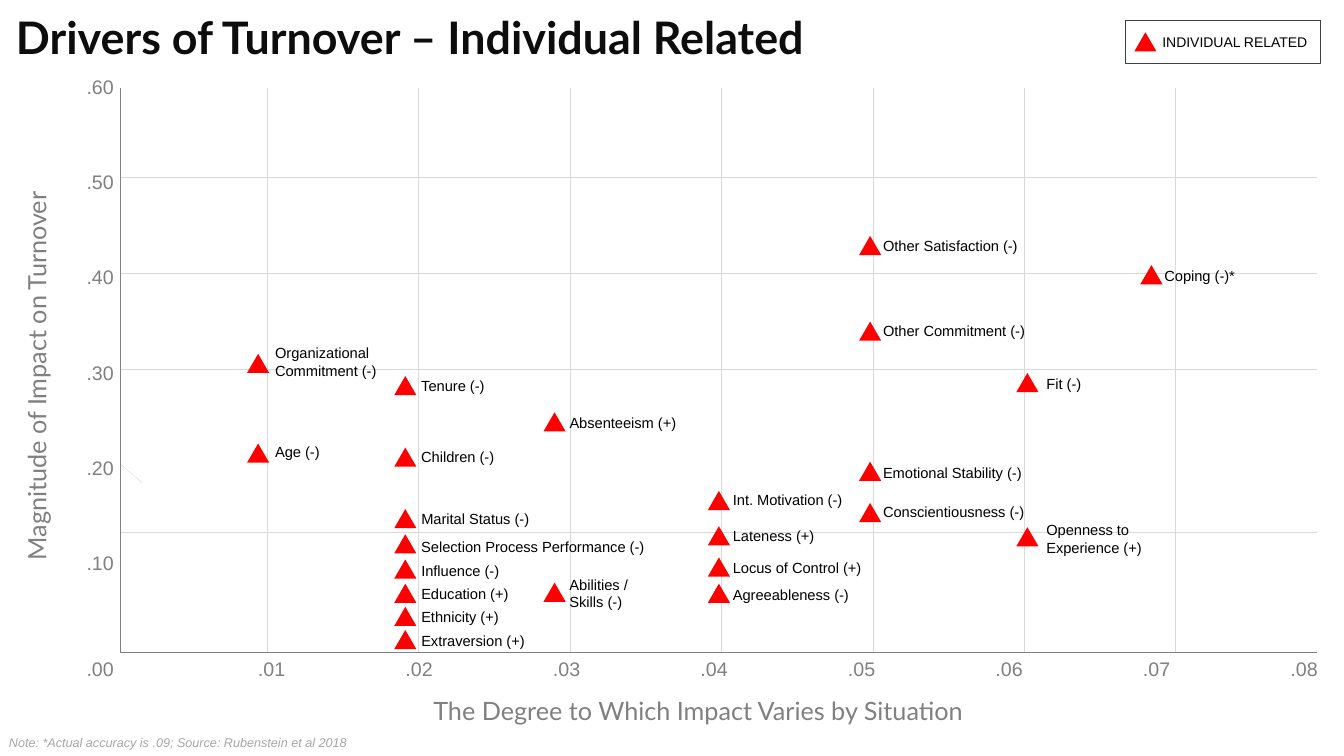
import pptx
import pptx.util
import pptx.dml.color
import pptx.enum.shapes
import pptx.enum.text
import pptx.oxml.ns
import lxml.etree

Inches = pptx.util.Inches
Shape = pptx.enum.shapes.MSO_SHAPE
Anchor = pptx.enum.text.MSO_ANCHOR
Align = pptx.enum.text.PP_ALIGN

GRAY = "808080"
PALE = "D9D9D9"
RED = "FF0000"
BLACK = "000000"
WHITE = "FFFFFF"

# marker x, label x, [label, marker y, label y, width, height]
GROUPS = [
    (1.26, 1.44, [
        ("Organizational Commitment (-)", 2.64, 2.49, 1.31, 0.45),
        ("Age (-)", 3.53, 3.47, 0.65, 0.28)]),
    (2.72, 2.89, [
        ("Tenure (-)", 2.86, 2.82, 0.86, 0.28),
        ("Children (-)", 3.57, 3.52, 0.94, 0.28),
        ("Marital Status (-)", 4.18, 4.13, 1.29, 0.28),
        ("Selection Process Performance (-)", 4.43, 4.41, 2.5, 0.28),
        ("Influence (-)", 4.68, 4.65, 0.99, 0.28),
        ("Education (+)", 4.92, 4.88, 1.08, 0.28),
        ("Ethnicity (+)", 5.15, 5.11, 0.98, 0.28),
        ("Extraversion (+)", 5.38, 5.35, 1.25, 0.28)]),
    (4.2, 4.36, [
        ("Absenteeism (+)", 3.22, 3.18, 1.28, 0.28),
        ("Abilities / Skills (-)", 4.91, 4.78, 1.03, 0.47)]),
    (5.83, 5.98, [
        ("Int. Motivation (-)", 4, 3.95, 1.31, 0.28),
        ("Lateness (+)", 4.35, 4.3, 1.03, 0.28),
        ("Locus of Control (+)", 4.66, 4.62, 1.5, 0.28),
        ("Agreeableness (-)", 4.92, 4.89, 1.38, 0.28)]),
    (7.33, 7.47, [
        ("Other Satisfaction (-)", 1.47, 1.43, 1.56, 0.28),
        ("Other Commitment (-)", 2.32, 2.27, 1.63, 0.28),
        ("Emotional Stability (-)", 3.71, 3.68, 1.6, 0.28),
        ("Conscientiousness (-)", 4.12, 4.07, 1.63, 0.28)]),
    (8.89, 9.09, [
        ("Fit (-)", 2.83, 2.8, 0.55, 0.28),
        ("Openness to Experience (+)", 4.36, 4.25, 1.23, 0.45)]),
    (10.12, 10.26, [
        ("Coping (-)*", 1.76, 1.72, 0.92, 0.28)]),
]


def color(code):
    return pptx.dml.color.RGBColor.from_string(code)


def line(slide, x1, y1, x2, y2, code):
    rule = slide.shapes.add_connector(
        pptx.enum.shapes.MSO_CONNECTOR.STRAIGHT,
        Inches(x1), Inches(y1), Inches(x2), Inches(y2))
    rule.line.color.rgb = color(code)
    rule.line.width = pptx.util.Pt(0.25)
    props = rule.element.find(pptx.oxml.ns.qn("p:spPr"))
    lxml.etree.SubElement(props, pptx.oxml.ns.qn("a:effectLst"))


def shape(slide, kind, x, y, w, h, fill=None, edge=None):
    item = slide.shapes.add_shape(kind, Inches(x), Inches(y), Inches(w), Inches(h))
    item.shadow.inherit = False
    if fill:
        item.fill.solid()
        item.fill.fore_color.rgb = color(fill)
    else:
        item.fill.background()
    if edge:
        item.line.color.rgb = color(edge)
        item.line.width = pptx.util.Pt(0.5)
    else:
        item.line.fill.background()
    return item


def write(item, words, size, code, face="Arial", wrap=False,
          anchor=Anchor.TOP, align=Align.LEFT):
    frame = item.text_frame
    frame.word_wrap = wrap
    frame.auto_size = pptx.enum.text.MSO_AUTO_SIZE.SHAPE_TO_FIT_TEXT
    frame.vertical_anchor = anchor
    para = frame.paragraphs[0]
    para.text = words
    para.alignment = align
    para.font.size = pptx.util.Pt(size)
    para.font.name = face
    para.font.color.rgb = color(code)
    return para.font


def text(slide, x, y, w, h, words, size, code, **style):
    item = slide.shapes.add_textbox(Inches(x), Inches(y), Inches(w), Inches(h))
    return write(item, words, size, code, **style)


def mark(slide, x, y):
    shape(slide, Shape.ISOSCELES_TRIANGLE, x, y, 0.22, 0.19, fill=RED)


def grid(slide, x, y, w, h):
    for i in range(7):
        left = x + 1.46 + i * 9.01 / 6
        line(slide, left, y, left, y + h, PALE)
    for top in (0.89, 1.84, 2.79, 4.41):
        line(slide, x, y + top, x + w, y + top, PALE)
    line(slide, x, y + 3.73, x + 0.22, y + 3.92, PALE)
    line(slide, x, y, x, y + h, GRAY)
    line(slide, x, y + h, x + w, y + h, GRAY)


def ticks(slide, x, y, w, h):
    text(slide, x - 0.43, y + h, 0.52, 0.4, ".00", 14, GRAY)
    for i in range(6):
        top = y + h - 1.05 - i * 4.73 / 5
        text(slide, x - 0.43, top, 0.52, 0.4, f".{i + 1}0", 14, GRAY)
    for i in range(8):
        left = x + 1.27 + i * 10.24 / 7
        text(slide, left, y + h, 0.52, 0.4, f".0{i + 1}", 14, GRAY)


def title(slide, x, y, w, h, words, turn=0):
    item = shape(slide, Shape.RECTANGLE, x, y, w, h, fill=WHITE)
    item.rotation = turn
    write(item, words, 18, GRAY, face="Lato", align=Align.CENTER)


def points(slide, x, y):
    for left, start, items in GROUPS:
        for words, top, head, w, h in items:
            text(slide, x + start, y + head, w, h, words, 10.5, BLACK,
                 wrap=h > 0.3, anchor=Anchor.MIDDLE)
            mark(slide, x + left, y + top)


def plot(slide, x, y, w, h):
    grid(slide, x, y, w, h)
    ticks(slide, x, y, w, h)
    title(slide, x - 2.79, y + 2.66, 3.92, 0.4,
          "Magnitude of Impact on Turnover", 270)
    title(slide, x + 2.94, y + h + 0.38, 5.59, 0.4,
          "The Degree to Which Impact Varies by Situation")
    points(slide, x, y)


def legend(slide, x, y, w, h):
    shape(slide, Shape.RECTANGLE, x, y, w, h, edge="404040")
    mark(slide, x + 0.09, y + 0.12)
    text(slide, x + 0.27, y + 0.08, w - 0.27, 0.27, "INDIVIDUAL RELATED",
         10, BLACK, anchor=Anchor.MIDDLE)


def main():
    deck = pptx.Presentation()
    deck.slide_width = Inches(13.33)
    deck.slide_height = Inches(7.5)
    slide = deck.slides.add_slide(deck.slide_layouts[6])
    plot(slide, 1.19, 0.87, 11.87, 5.6)
    legend(slide, 11.16, 0.2, 1.94, 0.43)
    head = text(slide, 0.06, 0.05, 8.27, 0.64,
                "Drivers of Turnover – Individual Related", 32, "0D0D0D", face="Lato")
    head.bold = True
    note = text(slide, -0.01, 7.24, 3.62, 0.4,
                "Note: *Actual accuracy is .09; Source: Rubenstein et al 2018", 9, "A6A6A6")
    note.italic = True
    deck.save("out.pptx")


if __name__ == "__main__":
    main()
